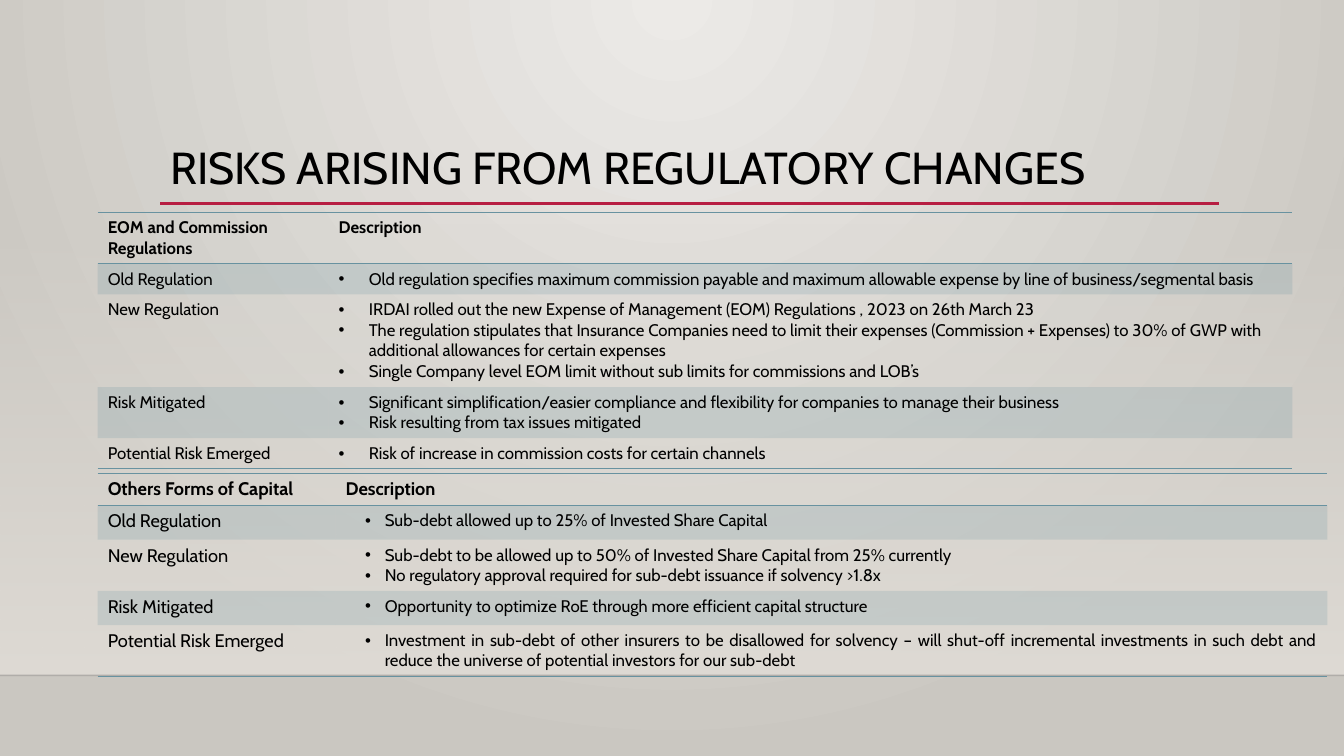
from pptx import Presentation
from pptx.dml.color import RGBColor as RGB
from pptx.enum.shapes import MSO_CONNECTOR as CONN, MSO_SHAPE as SHAPE
from pptx.enum.text import MSO_ANCHOR as ANCHOR, PP_ALIGN as ALIGN
from pptx.oxml import parse_xml
from pptx.oxml.ns import nsdecls, qn
from pptx.util import Pt
from lxml import etree

COLORS = {"text": "000000", "teal": "6892A0", "red": "B71E42", "edge": "000001",
          "light": "ECEAE7", "dark": "CAC7C1", "floor": "DFDBD5"}
FONT = "Cabin"
NO_STYLE = "{2D5ABB26-0587-4C30-8999-92F81FD0307C}"


def set_alpha(color_el, percent):
    etree.SubElement(color_el, qn("a:alpha")).set("val", str(percent * 1000))


def style_font(font, size, bold=False):
    font.name, font.size, font.bold = FONT, Pt(size), bold
    font.color.rgb = RGB.from_string(COLORS["text"])


prs = Presentation()
prs.slide_width, prs.slide_height = Pt(960), Pt(540)
slide = prs.slides.add_slide(prs.slide_layouts[5])

# Background: radial glow from the top centre
fill = slide.background.fill
fill.gradient()
for stop, name in zip(fill.gradient_stops, ("light", "dark")):
    stop.color.rgb = RGB.from_string(COLORS[name])
lin = next(slide.background._cSld.iter(qn("a:lin")))
lin.getparent().replace(lin, parse_xml(
    f'<a:path {nsdecls("a")} path="circle">'
    '<a:fillToRect l="43000" t="0" r="43000" b="100000"/></a:path>'))

# Wall fading in towards the floor
wall = slide.shapes.add_shape(SHAPE.RECTANGLE, 0, Pt(159), Pt(960), Pt(323.4))
wall.shadow.inherit = False
wall.line.fill.background()
wall.fill.gradient()
wall.fill.gradient_angle = 270
for stop in wall.fill.gradient_stops:
    stop.color.rgb = RGB.from_string(COLORS["floor"])
set_alpha(next(wall._element.spPr.iter(qn("a:srgbClr"))), 0)

# Floor edge and title rule
for x1, x2, y, color, width, alpha in ((0, 960, 482.4, "edge", 1, 20),
                                       (114.5, 871, 145.4, "red", 2.5, 100)):
    line = slide.shapes.add_connector(CONN.STRAIGHT, Pt(x1), Pt(y), Pt(x2), Pt(y))
    line.line.color.rgb = RGB.from_string(COLORS[color])
    line.line.width = Pt(width)
    spPr = line._element.spPr
    set_alpha(next(spPr.iter(qn("a:srgbClr"))), alpha)
    etree.SubElement(spPr, qn("a:effectLst"))

# Title
title = slide.shapes.title
title.left, title.top, title.width, title.height = Pt(114.5), Pt(97.9), Pt(756), Pt(47.5)
tf = title.text_frame
tf.text = "RISKS ARISING FROM REGULATORY CHANGES"
tf.vertical_anchor = ANCHOR.MIDDLE
p = tf.paragraphs[0]
p.alignment, p.line_spacing = ALIGN.LEFT, 0.9
style_font(p.runs[0].font, 32)

# Tables: each row is a label and its bullet points
TABLES = [
    {"top": 151.6, "cols": (164.9, 688.5), "heights": (36.8, 21.8, 66.2, 36.4, 21.8),
     "label_size": 12, "indent": (21.6, -21.6), "align": ALIGN.LEFT,
     "rows": [
         ("EOM and Commission Regulations", ["Description"]),
         ("Old Regulation", [
             "Old regulation specifies maximum commission payable and maximum allowable "
             "expense by line of business/segmental basis"]),
         ("New Regulation", [
             "IRDAI rolled out the new Expense of Management (EOM) Regulations , 2023 "
             "on 26th March 23",
             "The regulation stipulates that Insurance Companies need to limit their expenses "
             "(Commission + Expenses) to 30% of GWP with additional allowances for certain "
             "expenses",
             "Single Company level EOM limit without sub limits for commissions and LOB’s"]),
         ("Risk Mitigated", [
             "Significant simplification/easier compliance and flexibility for companies "
             "to manage their business",
             "Risk resulting from tax issues mitigated"]),
         ("Potential Risk Emerged", [
             "Risk of increase in commission costs for certain channels"])]},
    {"top": 338, "cols": (169.9, 708.5), "heights": (23, 24.5, 36.4, 24.5, 36.4),
     "label_size": 13, "indent": (28, -14), "align": ALIGN.JUSTIFY,
     "rows": [
         ("Others Forms of Capital", ["Description"]),
         ("Old Regulation", ["Sub-debt allowed up to 25% of Invested Share Capital"]),
         ("New Regulation", [
             "Sub-debt to be allowed up to 50% of Invested Share Capital from 25% currently",
             "No regulatory approval required for sub-debt issuance if solvency >1.8x"]),
         ("Risk Mitigated", [
             "Opportunity to optimize RoE through more efficient capital structure"]),
         ("Potential Risk Emerged", [
             "Investment in sub-debt of other insurers to be disallowed for solvency – will "
             "shut-off incremental investments in such debt and reduce the universe of "
             "potential investors for our sub-debt"])]},
]

for spec in TABLES:
    rows, heights, cols = spec["rows"], spec["heights"], spec["cols"]
    frame = slide.shapes.add_table(len(rows), 2, Pt(69.8), Pt(spec["top"]),
                                   Pt(sum(cols)), Pt(sum(heights)))
    table = frame.table
    table.first_row = table.horz_banding = False
    next(frame._element.iter(qn("a:tableStyleId"))).text = NO_STYLE
    for col, width in zip(table.columns, cols):
        col.width = Pt(width)

    for i, (label, points) in enumerate(rows):
        table.rows[i].height = Pt(heights[i])
        header = i == 0
        for j, lines in enumerate(([label], points)):
            cell = table.cell(i, j)
            bulleted = j == 1 and not header
            cell.text_frame.text = "\n".join(lines)
            for p in cell.text_frame.paragraphs:
                if bulleted:
                    pPr = p._p.get_or_add_pPr()
                    for key, value in zip(("marL", "indent"), spec["indent"]):
                        pPr.set(key, str(Pt(value)))
                    etree.SubElement(pPr, qn("a:buFont")).set("typeface", "Arial")
                    etree.SubElement(pPr, qn("a:buChar")).set("char", "•")
                    p.alignment = spec["align"]
                style_font(p.runs[0].font, 12 if bulleted else spec["label_size"], header)

            # Teal band on every second row
            tcPr = cell._tc.get_or_add_tcPr()
            if i % 2:
                cell.fill.solid()
                cell.fill.fore_color.rgb = RGB.from_string(COLORS["teal"])
                set_alpha(next(tcPr.iter(qn("a:srgbClr"))), 20)
            else:
                cell.fill.background()

            # Rules around the header and under the last row
            sides = ("lnB", "lnT") if header else ("lnB",) if i == len(rows) - 1 else ()
            for side in sides:
                tcPr.insert(0, parse_xml(
                    f'<a:{side} {nsdecls("a")} w="{Pt(1)}"><a:solidFill>'
                    f'<a:srgbClr val="{COLORS["teal"]}"/></a:solidFill></a:{side}>'))

prs.save("out.pptx")
